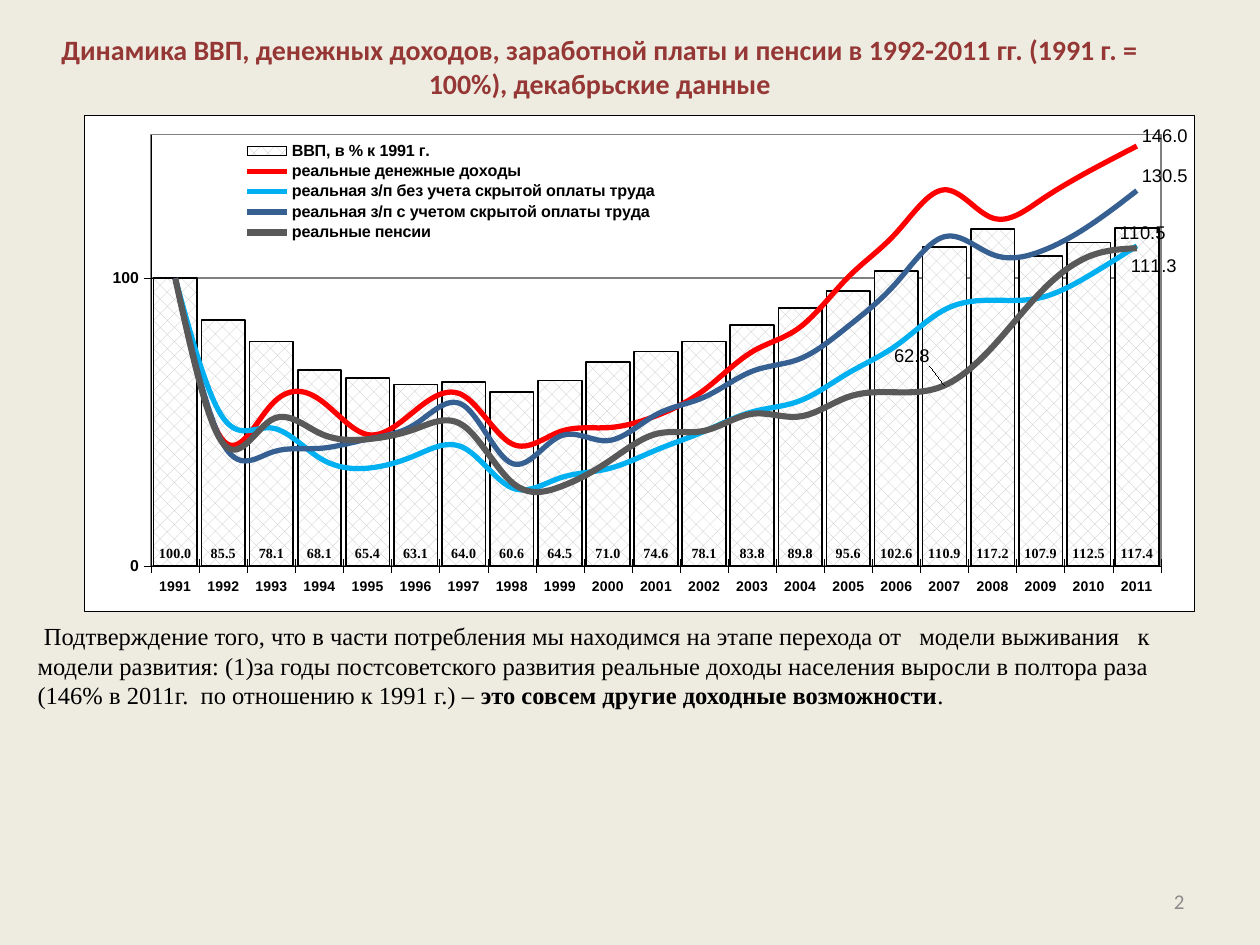
from dataclasses import dataclass
from typing import Any

from lxml import etree
from pptx import Presentation
from pptx.chart.data import CategoryChartData
from pptx.dml.color import RGBColor
from pptx.enum.chart import XL_CHART_TYPE, XL_LABEL_POSITION, XL_LEGEND_POSITION, XL_MARKER_STYLE, XL_TICK_MARK
from pptx.enum.dml import MSO_PATTERN
from pptx.enum.text import MSO_ANCHOR, PP_ALIGN
from pptx.oxml import parse_xml
from pptx.oxml.ns import nsdecls, qn
from pptx.util import Inches, Pt

COLUMN_CHART = XL_CHART_TYPE.COLUMN_CLUSTERED
INSIDE_BASE = XL_LABEL_POSITION.INSIDE_BASE
RIGHT_LABEL = XL_LABEL_POSITION.RIGHT
RIGHT_LEGEND = XL_LEGEND_POSITION.RIGHT
NO_MARKER = XL_MARKER_STYLE.NONE
CROSS = XL_TICK_MARK.CROSS
HATCH = MSO_PATTERN.PERCENT_25
TOP, MIDDLE = MSO_ANCHOR.TOP, MSO_ANCHOR.MIDDLE
LEFT, CENTER, RIGHT = PP_ALIGN.LEFT, PP_ALIGN.CENTER, PP_ALIGN.RIGHT


@dataclass(frozen=True)
class Theme:
    background: str = "EEECE1"
    title: str = "953735"
    text: str = "000000"
    page: str = "8C8C8C"
    white: str = "FFFFFF"
    hatch: str = "C0C0C0"
    grid: str = "808080"
    heading_font: str = "Calibri"
    body_font: str = "Times New Roman"
    chart_font: str = "Arial"
    title_size: float = 16
    body_size: float = 14
    page_size: float = 12
    label_size: float = 10.5
    legend_size: float = 9.2
    value_size: float = 9
    small_size: float = 8


@dataclass(frozen=True)
class PointLabel:
    year: int
    shift_x: float
    shift_y: float


@dataclass(frozen=True)
class Indicator:
    name: str
    values: tuple[float, ...]
    color: str = ""
    width: float = 3
    labels: tuple[PointLabel, ...] = ()


@dataclass(frozen=True)
class TextRun:
    text: str
    font: str
    size: float
    color: str
    bold: bool = False


THEME = Theme()
YEARS = range(1991, 2012)
GDP = Indicator("ВВП, в % к 1991 г.", (
    100, 85.5, 78.1, 68.1, 65.4, 63.1, 64.0, 60.6, 64.5, 71.0, 74.6,
    78.1, 83.8, 89.8, 95.6, 102.6, 110.9, 117.2, 107.9, 112.5, 117.4))
LINES = (
    Indicator("реальные денежные доходы", (
        100, 43.6, 56.1, 57.9, 45.7, 54.2, 59.2, 42.5, 46.7, 48.1, 52.2,
        61.2, 74.5, 83.1, 100.5, 115.9, 130.8, 121.0, 127.2, 137.2, 146.0),
        "FF0000", labels=(PointLabel(2011, 0, -0.02),)),
    Indicator("реальная з/п без учета скрытой оплаты труда", (
        100, 51.4, 48.0, 37.6, 34.0, 38.5, 41.1, 27.2, 30.6, 33.8, 40.3,
        46.8, 53.6, 57.5, 67.1, 76.7, 89.1, 92.4, 93.3, 100.9, 111.3),
        "00B0F0", labels=(PointLabel(2011, -0.01, 0.04),)),
    Indicator("реальная з/п с учетом скрытой оплаты труда", (
        100, 42.3, 39.5, 40.9, 44.1, 49.4, 55.8, 35.7, 45.1, 43.6, 52.6,
        58.7, 67.7, 72.1, 83.4, 98.5, 114.5, 108.3, 109.4, 118.2, 130.5),
        "376092", labels=(PointLabel(2011, 0, -0.03),)),
    Indicator("реальные пенсии", (
        100, 42.5, 50.8, 46.2, 44.1, 47.7, 48.7, 29.1, 27.5, 36.2, 45.9,
        47.0, 52.9, 52.0, 58.8, 60.4, 62.8, 76.2, 95.2, 107.6, 110.5),
        "595959", 3.5, (PointLabel(2007, -0.05, -0.06), PointLabel(2011, -0.02, -0.03))),
)


def style_font(font: Any, name: str, size: float, color: str, bold: bool = False) -> None:
    font.name, font.size, font.bold = name, Pt(size), bold
    font.color.rgb = RGBColor.from_string(color)


def style_line(line: Any, color: str, width: float) -> None:
    line.color.rgb = RGBColor.from_string(color)
    line.width = Pt(width)


def write_text(shape: Any, runs: tuple[TextRun, ...], alignment: Any, anchor: Any) -> None:
    frame = shape.text_frame
    frame.word_wrap, frame.vertical_anchor = True, anchor
    paragraph = frame.paragraphs[0]
    paragraph.alignment = alignment
    for item in runs:
        run = paragraph.add_run()
        run.text = item.text
        style_font(run.font, item.font, item.size, item.color, item.bold)


def manual_layout(**settings: Any) -> Any:
    entries = "".join(f'<c:{key} val="{value}"/>' for key, value in settings.items())
    return parse_xml(f'<c:layout {nsdecls("c")}><c:manualLayout>{entries}</c:manualLayout></c:layout>')


def frame_properties(fill: str, color: str, width: float) -> Any:
    return parse_xml(
        f'<c:spPr {nsdecls("c", "a")}>{fill}<a:ln w="{Pt(width)}"><a:solidFill>'
        f'<a:srgbClr val="{color}"/></a:solidFill></a:ln></c:spPr>')


def remove_children(parent: Any, tag: str) -> None:
    for child in parent.findall(qn(tag)):
        parent.remove(child)


def move_lines_to_line_plot(plot_area: Any) -> None:
    bar_plot = plot_area.find(qn("c:barChart"))
    line_plot = parse_xml(f'<c:lineChart {nsdecls("c")}><c:grouping val="standard"/>'
                          '<c:varyColors val="0"/></c:lineChart>')
    for series in bar_plot.findall(qn("c:ser"))[1:]:
        remove_children(series, "c:invertIfNegative")
        line_plot.append(series)
    etree.SubElement(line_plot, qn("c:marker")).set("val", "1")
    for axis in bar_plot.findall(qn("c:axId")):
        etree.SubElement(line_plot, qn("c:axId")).set("val", axis.get("val"))
    bar_plot.addnext(line_plot)


def style_indicator(series: Any, indicator: Indicator) -> None:
    series.smooth = True
    series.marker.style = NO_MARKER
    style_line(series.format.line, indicator.color, indicator.width)
    labels = series.data_labels
    labels.show_value = False
    labels.number_format, labels.number_format_is_linked = "0.0", False
    style_font(labels.font, THEME.chart_font, THEME.label_size, THEME.text)
    for label in indicator.labels:
        index = label.year - YEARS[0]
        series.points[index].data_label.position = RIGHT_LABEL
        for element in series._element.iter(qn("c:dLbl")):
            marker = element.find(qn("c:idx"))
            if marker.get("val") == str(index):
                marker.addnext(manual_layout(x=label.shift_x, y=label.shift_y))


def style_axis(axis: Any, size: float) -> None:
    axis.major_tick_mark = CROSS
    style_font(axis.tick_labels.font, THEME.chart_font, size, THEME.text, True)
    style_line(axis.format.line, THEME.text, 0.25)


def add_income_chart(slide: Any) -> None:
    data = CategoryChartData(number_format="0.0")
    data.categories = [str(year) for year in YEARS]
    for indicator in (GDP, *LINES):
        data.add_series(indicator.name, indicator.values)
    chart = slide.shapes.add_chart(
        COLUMN_CHART, Inches(0.67), Inches(0.91), Inches(8.81), Inches(3.94), data).chart
    style_font(chart.font, THEME.chart_font, THEME.label_size, THEME.text)
    chart.has_title = False
    style_axis(chart.category_axis, THEME.small_size)
    axis = chart.value_axis
    style_axis(axis, THEME.value_size)
    axis.minimum_scale, axis.maximum_scale, axis.major_unit = 0, 150, 100
    axis.tick_labels.number_format, axis.tick_labels.number_format_is_linked = "0", False
    style_line(axis.major_gridlines.format.line, THEME.grid, 1)

    chart_element = chart._chartSpace.find(qn("c:chart"))
    plot_area = chart_element.find(qn("c:plotArea"))
    move_lines_to_line_plot(plot_area)
    bar_plot, line_plot = chart.plots
    bar_plot.gap_width, bar_plot.vary_by_categories = 10, False
    columns = bar_plot.series[0]
    fill = columns.format.fill
    fill.patterned()
    fill.pattern = HATCH
    fill.fore_color.rgb = RGBColor.from_string(THEME.hatch)
    fill.back_color.rgb = RGBColor.from_string(THEME.white)
    style_line(columns.format.line, THEME.text, 1)
    labels = columns.data_labels
    labels.show_value, labels.position = True, INSIDE_BASE
    labels.number_format, labels.number_format_is_linked = "0.0", False
    style_font(labels.font, THEME.body_font, THEME.small_size, THEME.text, True)
    for series, indicator in zip(line_plot.series, LINES):
        style_indicator(series, indicator)

    chart.has_legend = True
    legend = chart.legend
    legend.position, legend.include_in_layout = RIGHT_LEGEND, True
    style_font(legend.font, THEME.chart_font, THEME.legend_size, THEME.text, True)
    remove_children(legend._element, "c:layout")
    legend._element.insert(1, manual_layout(xMode="edge", yMode="edge", x=0.14, y=0.05, w=0.38, h=0.21))
    remove_children(plot_area, "c:layout")
    plot_area.insert(0, manual_layout(
        layoutTarget="inner", xMode="edge", yMode="edge", x=0.06, y=0.04, w=0.91, h=0.87))
    plot_area.append(frame_properties("<a:noFill/>", THEME.grid, 1))
    white_fill = f'<a:solidFill><a:srgbClr val="{THEME.white}"/></a:solidFill>'
    chart_element.addnext(frame_properties(white_fill, THEME.text, 0.25))


def main() -> None:
    presentation = Presentation()
    presentation.slide_width, presentation.slide_height = Inches(10), Inches(7.5)
    slide = presentation.slides.add_slide(presentation.slide_layouts[5])
    slide.background.fill.solid()
    slide.background.fill.fore_color.rgb = RGBColor.from_string(THEME.background)
    add_income_chart(slide)
    title = slide.shapes.title
    title.left, title.top, title.width, title.height = Inches(0.35), Inches(0.21), Inches(8.82), Inches(0.64)
    write_text(title, (TextRun(
        "Динамика ВВП, денежных доходов, заработной платы и пенсии в 1992-2011 гг. (1991 г. = 100%), декабрьские данные",
        THEME.heading_font, THEME.title_size, THEME.title, True),), CENTER, TOP)
    page = slide.shapes.add_textbox(Inches(7.17), Inches(6.95), Inches(2.33), Inches(0.4))
    write_text(page, (TextRun("2", THEME.heading_font, THEME.page_size, THEME.page),), RIGHT, MIDDLE)
    body = slide.shapes.add_textbox(Inches(0.2), Inches(4.85), Inches(9.53), Inches(0.84))
    body_style = (THEME.body_font, THEME.body_size, THEME.text)
    write_text(body, (
        TextRun(" ", THEME.heading_font, THEME.title_size, THEME.text),
        TextRun("Подтверждение того, что в части потребления мы находимся на этапе перехода от   модели выживания   к  "
                "модели развития: (1)за годы постсоветского развития реальные доходы населения выросли в полтора раза "
                "(146% в 2011г.  по отношению к 1991 г.) – ", *body_style),
        TextRun("это совсем другие доходные возможности", *body_style, True),
        TextRun(".", *body_style)), LEFT, TOP)
    presentation.save("out.pptx")


if __name__ == "__main__":
    main()
